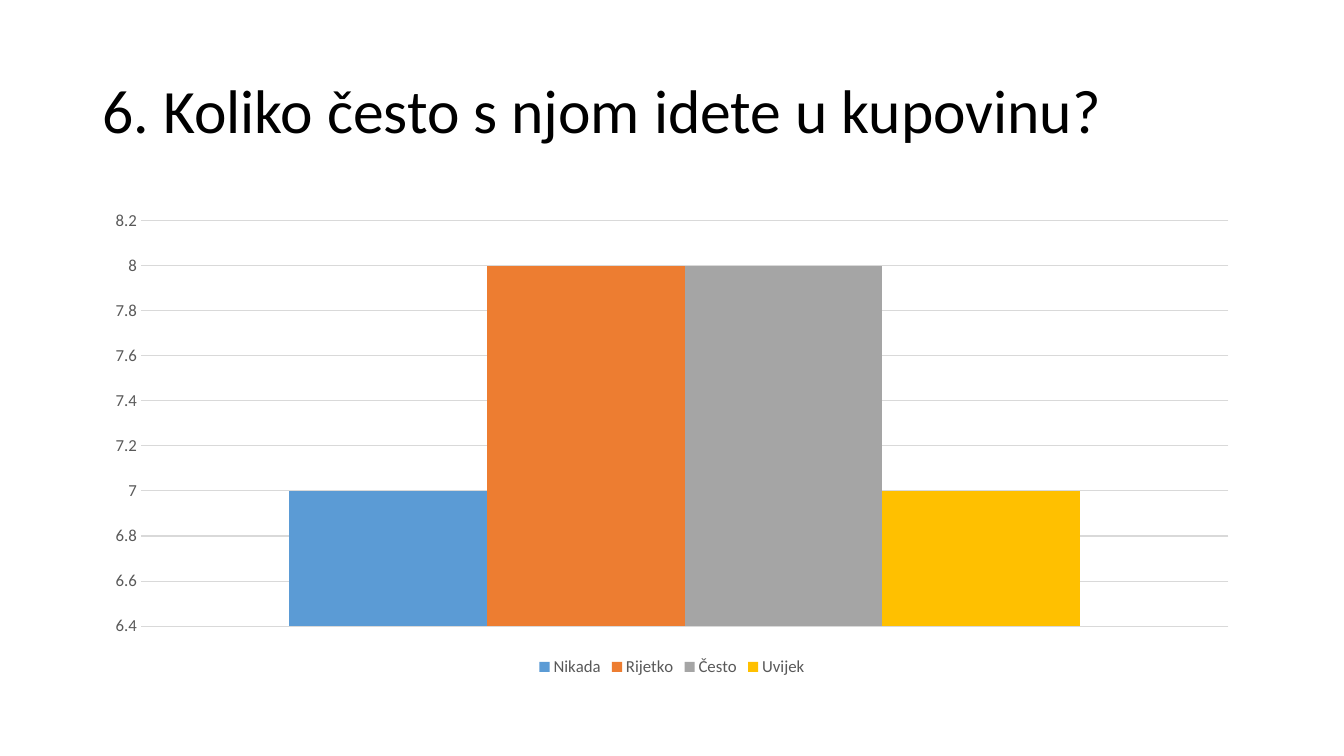
from pptx import Presentation
from pptx.chart.data import CategoryChartData
from pptx.dml.color import RGBColor
from pptx.enum.chart import XL_CHART_TYPE, XL_LEGEND_POSITION, XL_TICK_MARK
from pptx.enum.text import MSO_ANCHOR, MSO_AUTO_SIZE, PP_ALIGN
from pptx.util import Cm, Pt

COLORS = {
    "title": "000000",
    "label": "595959",
    "grid": "D9D9D9",
    "Nikada": "5B9BD5",
    "Rijetko": "ED7D31",
    "Često": "A5A5A5",
    "Uvijek": "FFC000",
}
ANSWERS = {"Nikada": 7, "Rijetko": 8, "Često": 8, "Uvijek": 7}


class SurveySlide:
    """Hold the survey style and the slide being built."""

    font_name = "Calibri"
    left, width = Cm(2.33), Cm(29.21)

    def __init__(self, presentation):
        """Add a slide that has only a title placeholder."""
        self.slide = presentation.slides.add_slide(presentation.slide_layouts[5])

    def style_font(self, font, size, color):
        """Apply the slide font with a size and a named colour."""
        font.name = self.font_name
        font.size = Pt(size)
        font.color.rgb = RGBColor.from_string(COLORS[color])

    def add_question(self, wording):
        """Write the survey question in the title placeholder."""
        question = self.slide.shapes.title
        question.left, question.top = self.left, Cm(1.01)
        question.width, question.height = self.width, Cm(3.68)
        frame = question.text_frame
        frame.word_wrap = True
        frame.auto_size = MSO_AUTO_SIZE.NONE
        frame.vertical_anchor = MSO_ANCHOR.MIDDLE
        paragraph = frame.paragraphs[0]
        paragraph.alignment = PP_ALIGN.LEFT
        paragraph.line_spacing = 0.9
        run = paragraph.add_run()
        run.text = wording
        self.style_font(run.font, 44, "title")

    def add_answers(self, answers):
        """Plot the answer counts as clustered columns."""
        counts = CategoryChartData()
        counts.categories = ["1"]
        for answer, count in answers.items():
            counts.add_series(answer, [count])
        chart = self.slide.shapes.add_chart(
            XL_CHART_TYPE.COLUMN_CLUSTERED,
            self.left, Cm(5.07), self.width, Cm(12.09), counts,
        ).chart
        chart.has_title = False
        self.style_font(chart.font, 10, "title")
        plot = chart.plots[0]
        plot.vary_by_categories = False
        plot.gap_width = 150
        plot.overlap = 0
        for bars in plot.series:
            bars.format.fill.solid()
            bars.format.fill.fore_color.rgb = RGBColor.from_string(COLORS[bars.name])
            bars.format.line.fill.background()
            bars.invert_if_negative = False
        chart.category_axis.visible = False
        self.format_scale(chart.value_axis)
        self.format_legend(chart)

    def format_scale(self, scale):
        """Set the range, labels and gridlines of the value axis."""
        scale.minimum_scale, scale.maximum_scale = 6.4, 8.2
        scale.major_unit = 0.2
        scale.major_tick_mark = scale.minor_tick_mark = XL_TICK_MARK.NONE
        scale.format.line.fill.background()
        scale.has_major_gridlines = True
        grid = scale.major_gridlines.format.line
        grid.width = Pt(0.75)
        grid.color.rgb = RGBColor.from_string(COLORS["grid"])
        scale.tick_labels.number_format = "General"
        scale.tick_labels.number_format_is_linked = False
        self.style_font(scale.tick_labels.font, 12, "label")

    def format_legend(self, chart):
        """Show the answer names below the columns."""
        chart.has_legend = True
        chart.legend.position = XL_LEGEND_POSITION.BOTTOM
        chart.legend.include_in_layout = False
        self.style_font(chart.legend.font, 12, "label")


def main():
    """Build and save the survey slide."""
    presentation = Presentation()
    presentation.slide_width, presentation.slide_height = Cm(33.87), Cm(19.05)
    survey = SurveySlide(presentation)
    survey.add_question("6. Koliko često s njom idete u kupovinu?")
    survey.add_answers(ANSWERS)
    presentation.save("out.pptx")


if __name__ == "__main__":
    main()
